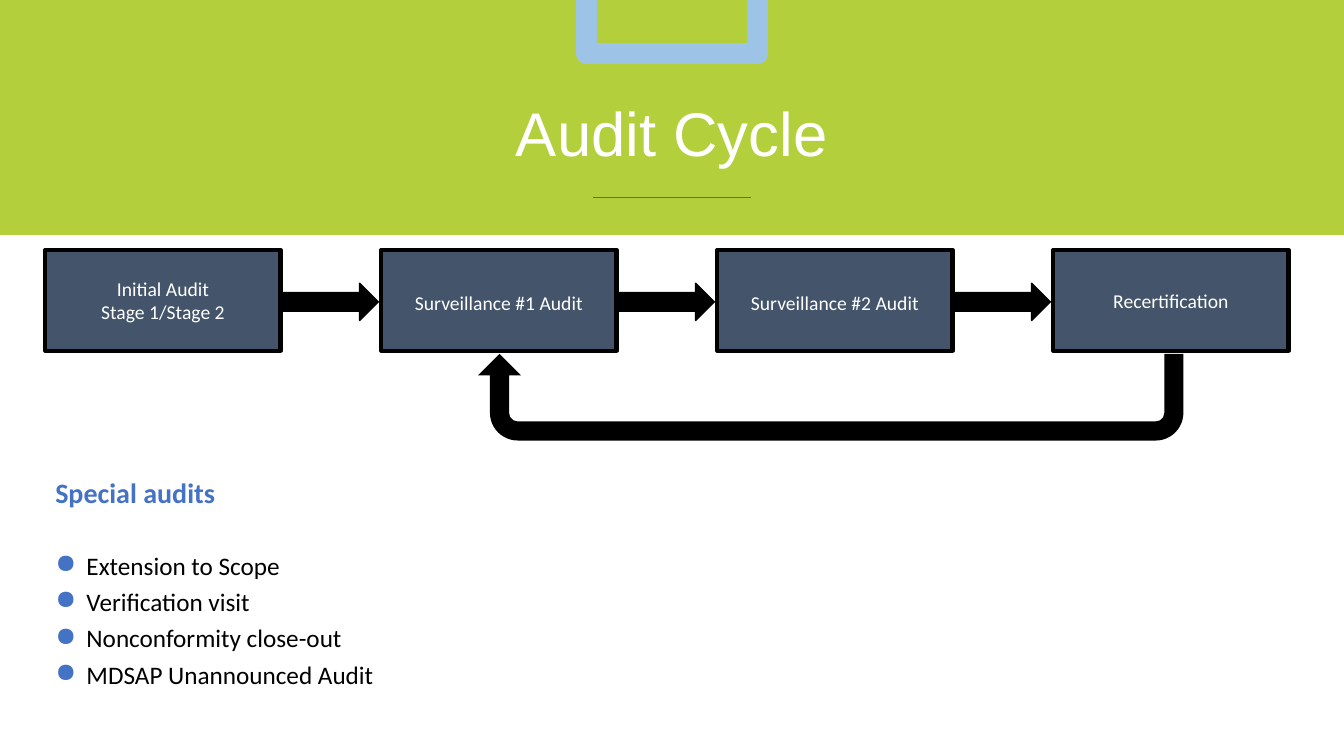
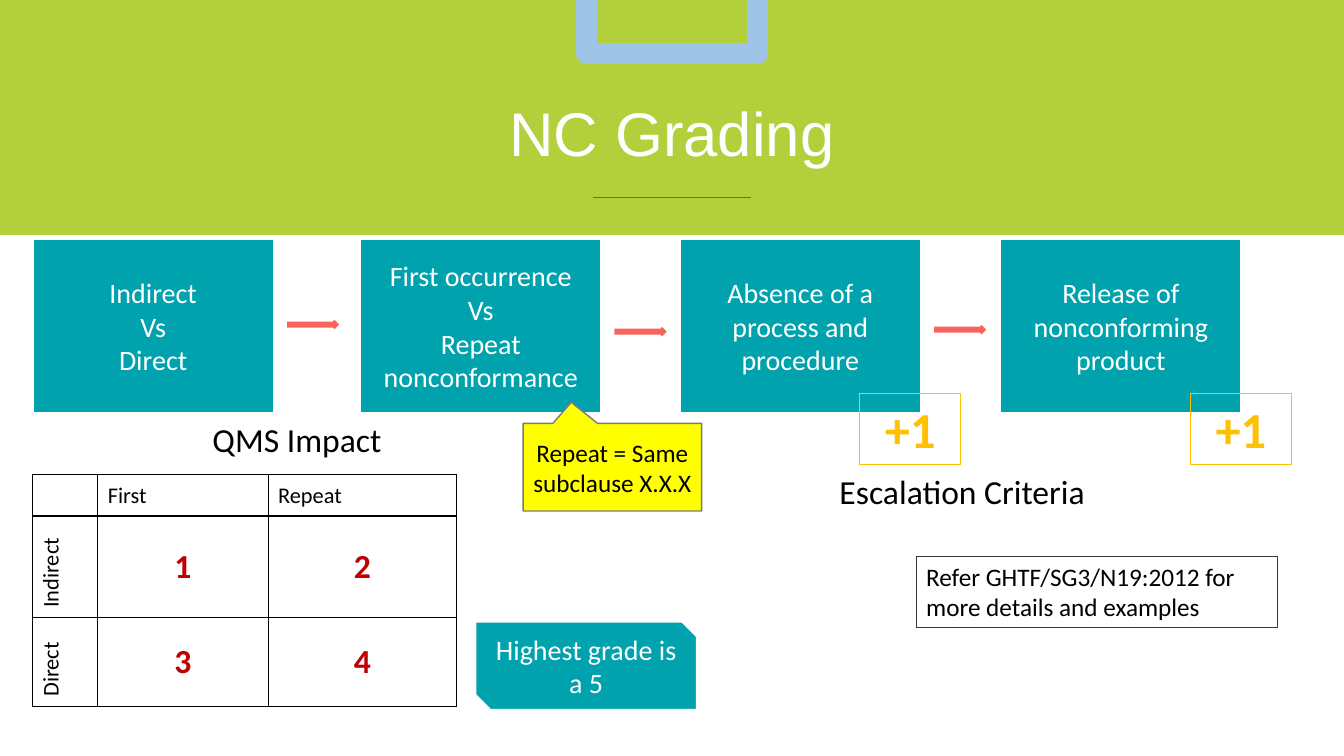
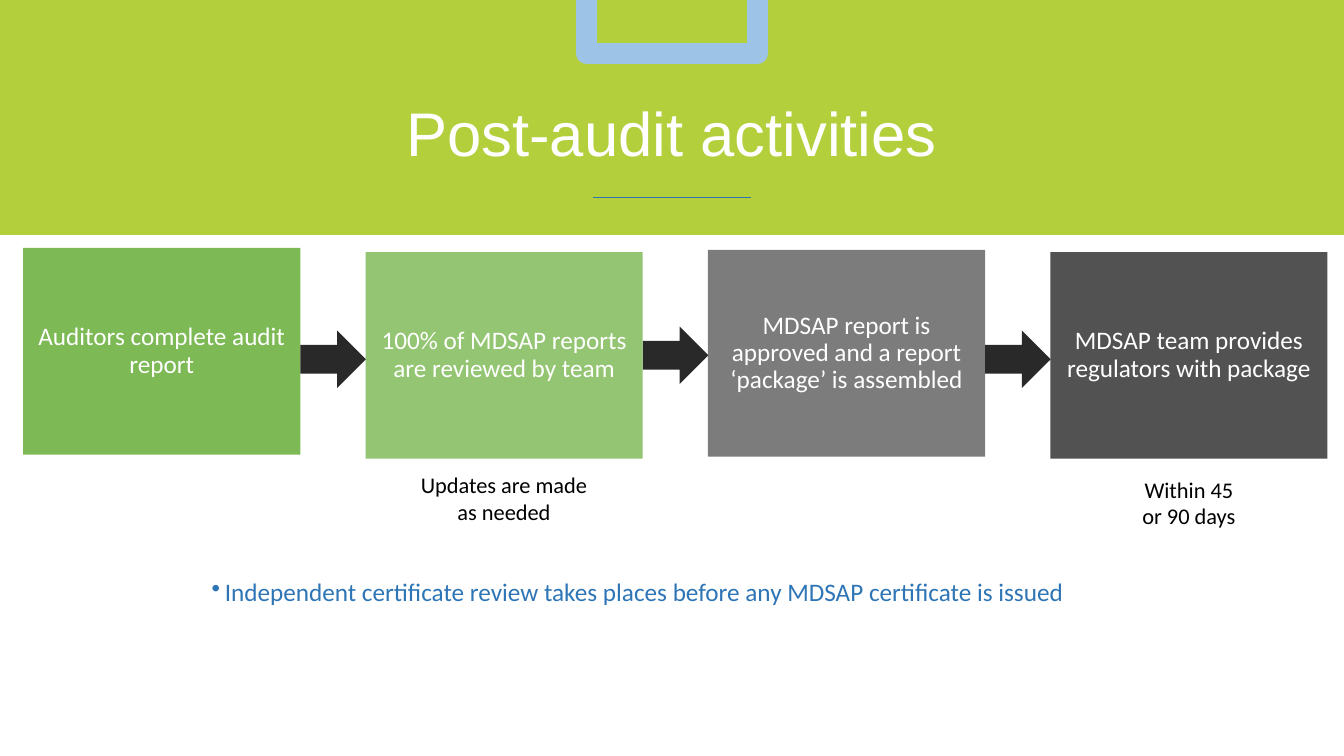
"""Build three audit programme slides on a grid of 80 columns by 45 rows."""

from lxml import etree
from pptx import Presentation
from pptx.dml.color import RGBColor
from pptx.enum.shapes import MSO_CONNECTOR, MSO_SHAPE
from pptx.enum.text import MSO_ANCHOR, PP_ALIGN
from pptx.oxml.ns import qn
from pptx.util import Inches, Pt

COLUMNS, ROWS = 80, 45
WIDTH, HEIGHT = Inches(13.33), Inches(7.5)
RECTANGLE = MSO_SHAPE.RECTANGLE
PROCESS = MSO_SHAPE.FLOWCHART_PROCESS
ARROW = MSO_SHAPE.RIGHT_ARROW
U_TURN = MSO_SHAPE.U_TURN_ARROW
CALLOUT = MSO_SHAPE.RECTANGULAR_CALLOUT
SNIPPED = MSO_SHAPE.SNIP_2_DIAG_RECTANGLE
STRAIGHT = MSO_CONNECTOR.STRAIGHT
LEFT, CENTER = PP_ALIGN.LEFT, PP_ALIGN.CENTER
TOP, MIDDLE = MSO_ANCHOR.TOP, MSO_ANCHOR.MIDDLE

COLORS = {
    "white": "FFFFFF", "black": "000000", "lime": "B3CF3B", "sky": "9DC3E6",
    "blue": "2E75B6", "accent": "4472C4", "slate": "44546A", "teal": "00A3AD",
    "coral": "F8635B", "gold": "FFC000", "red": "C00000", "yellow": "FFFF00",
    "green": "7DB955", "pale green": "93C572", "gray": "7C7C7C",
    "dark gray": "525252", "charcoal": "292929", "border gray": "7A7A7A",
    "ink": "37333B",
}


def color(name):
    """Return a named colour."""
    return RGBColor.from_string(COLORS[name])


class Deck:
    """Hold the shared style and the slide being drawn."""

    def __init__(self):
        """Start an empty widescreen presentation."""
        self.presentation = Presentation()
        self.presentation.slide_width = WIDTH
        self.presentation.slide_height = HEIGHT
        self.slide = None

    def grid(self, left, top, width, height):
        """Turn grid columns and rows into slide lengths."""
        column, row = WIDTH / COLUMNS, HEIGHT / ROWS
        return (round(left * column), round(top * row),
                round(width * column), round(height * row))

    def new_slide(self, title):
        """Add a slide with the title band, its frame and its divider."""
        layout = self.presentation.slide_layouts[6]
        self.slide = self.presentation.slides.add_slide(layout)
        self.shape(RECTANGLE, (0, 0, COLUMNS, 13.98), fill="lime")
        self.shape(RECTANGLE, (34.9, -1.26, 10.2, 4.44), line=("sky", 15))
        self.divider(35.28, 44.72, 11.76)
        self.text((0, 5.88, COLUMNS, 7.92), title, size=44, ink="white",
                  align=CENTER, spacing=0.9, font="Arial")

    def divider(self, start, end, row):
        """Draw a thin horizontal line."""
        left, top, right, bottom = self.grid(start, row, end, row)
        connector = self.slide.shapes.add_connector(
            STRAIGHT, left, top, right, bottom)
        connector.line.color.rgb = color("blue")
        connector.line.width = Pt(0.5)
        etree.SubElement(connector._element.spPr, qn("a:effectLst"))

    def shape(self, kind, box, fill=None, line=None, adjustments=(),
              rotation=0):
        """Add a preset shape with an optional fill and outline."""
        shape = self.slide.shapes.add_shape(kind, *self.grid(*box))
        shape.shadow.inherit = False
        shape.rotation = rotation
        for index, value in enumerate(adjustments):
            shape.adjustments[index] = value
        if fill:
            shape.fill.solid()
            shape.fill.fore_color.rgb = color(fill)
        else:
            shape.fill.background()
        if line:
            shape.line.color.rgb = color(line[0])
            shape.line.width = Pt(line[1])
        else:
            shape.line.fill.background()
        return shape

    def panel(self, kind, box, text, fill=None, line=None, adjustments=(),
              **style):
        """Add a preset shape that carries text."""
        shape = self.shape(kind, box, fill, line, adjustments)
        settings = {"ink": "white", "align": CENTER, "anchor": MIDDLE}
        self.fill_frame(shape.text_frame, text, **{**settings, **style})

    def text(self, box, text, **style):
        """Add a wrapping text box."""
        text_box = self.slide.shapes.add_textbox(*self.grid(*box))
        self.fill_frame(text_box.text_frame, text, **style)

    def fill_frame(self, frame, text, anchor=TOP, inset=None, **style):
        """Fill a text frame and style its paragraphs."""
        frame.text = text
        frame.word_wrap = True
        frame.vertical_anchor = anchor
        if inset is not None:
            frame.margin_left = frame.margin_right = Inches(inset)
            frame.margin_top = frame.margin_bottom = Inches(inset)
        self.style_frame(frame, **style)

    def style_frame(self, frame, size=18, ink="black", bold=False, align=LEFT,
                    spacing=1.0, bullet=None, font="Calibri"):
        """Style every paragraph and run of a text frame."""
        for paragraph in frame.paragraphs:
            if bullet:
                self.bullet(paragraph, *bullet)
            paragraph.alignment = align
            paragraph.line_spacing = spacing
            for run in paragraph.runs:
                run.font.name = font
                run.font.size = Pt(size)
                run.font.bold = bold
                run.font.color.rgb = color(ink)

    def bullet(self, paragraph, symbol, ink, percent, indent):
        """Give a paragraph a coloured bullet and a hanging indent."""
        properties = paragraph._p.get_or_add_pPr()
        properties.set("marL", str(Inches(indent)))
        properties.set("indent", str(-Inches(indent)))
        tint = etree.SubElement(properties, qn("a:buClr"))
        etree.SubElement(tint, qn("a:srgbClr"), val=COLORS[ink])
        etree.SubElement(properties, qn("a:buSzPct"), val=str(percent * 1000))
        etree.SubElement(properties, qn("a:buChar"), char=symbol)

    def table(self, left, top, widths, heights, rows):
        """Add a ruled table with upright row names and red grades."""
        box = self.grid(left, top, sum(widths), sum(heights))
        table = self.slide.shapes.add_table(
            len(heights), len(widths), *box).table
        table.first_row = table.horz_banding = False
        for column, width in zip(table.columns, widths):
            column.width = self.grid(0, 0, width, 0)[2]
        for row, height in zip(table.rows, heights):
            row.height = self.grid(0, 0, 0, height)[3]
        for row_index, row in enumerate(rows):
            for column_index, text in enumerate(row):
                cell = table.cell(row_index, column_index)
                cell.text = text
                cell.vertical_anchor = MIDDLE
                self.rule(cell)
                cell.fill.solid()
                cell.fill.fore_color.rgb = color("white")
                if row_index and column_index:
                    self.style_frame(cell.text_frame, 24, "red", True, CENTER)
                else:
                    self.style_frame(cell.text_frame, 16)
                if row_index and not column_index:
                    cell._tc.get_or_add_tcPr().set("vert", "vert270")

    def rule(self, cell):
        """Draw black borders around a table cell."""
        properties = cell._tc.get_or_add_tcPr()
        for side in ("a:lnL", "a:lnR", "a:lnT", "a:lnB"):
            border = etree.SubElement(properties, qn(side), w=str(Pt(1)))
            fill = etree.SubElement(border, qn("a:solidFill"))
            etree.SubElement(fill, qn("a:srgbClr"), val=COLORS["black"])


def audit_cycle(deck):
    """Draw the audit cycle and the list of special audits."""
    deck.new_slide("Audit Cycle")
    stages = (("Initial Audit\nStage 1/Stage 2", 1.0),
              ("Surveillance #1 Audit", 1.2),
              ("Surveillance #2 Audit", 1.2),
              ("Recertification", 1.0))
    for index, (stage, spacing) in enumerate(stages):
        left = 2.7 + 20 * index
        deck.panel(RECTANGLE, (left, 14.88, 14, 6), stage, "slate",
                   ("black", 3), size=14, spacing=spacing)
        if index < len(stages) - 1:
            deck.shape(ARROW, (left + 14, 16.86, 5.82, 2.22), "black",
                       ("black", 1))
    deck.shape(U_TURN, (28.44, 21.06, 42, 5.16), "black", rotation=180,
               adjustments=(0.22, 0.25, 0.25, 0.32, 1))
    deck.text((2.7, 28.02, 14.04, 2.64), "Special audits", size=20,
              ink="accent", bold=True)
    audits = ("Extension to Scope", "Verification visit",
              "Nonconformity close-out", "MDSAP Unannounced Audit")
    deck.text((2.7, 32.1, 69.24, 9.18), "\n".join(audits), spacing=1.2,
              bullet=("●", "accent", 105, 0.31))


def nc_grading(deck):
    """Draw the grading steps, the impact table and the notes."""
    deck.new_slide("NC Grading")
    steps = ((1.92, "Indirect\nVs\nDirect"),
             (21.42, "First occurrence\nVs\nRepeat nonconformance"),
             (40.44, "Absence of a process and procedure"),
             (59.52, "Release of nonconforming product"))
    for left, step in steps:
        deck.panel(PROCESS, (left, 14.22, 14.4, 10.38), step, "teal",
                   ("white", 2.25), size=20)
    for (left, _), top in zip(steps, (18.78, 19.2, 19.08)):
        deck.shape(ARROW, (left + 15.06, top, 3.36, 1.08), "coral",
                   ("white", 2.25))
    for left in (51.18, 70.86):
        deck.panel(RECTANGLE, (left, 23.4, 6, 4.26), "+1",
                   line=("gold", 0.75), size=36, ink="gold", bold=True,
                   anchor=TOP)
    deck.text((12.06, 24.66, 14.4, 3), "QMS Impact", size=24)
    deck.text((49.38, 27.72, 18.96, 3), "Escalation Criteria", size=24)
    deck.table(1.92, 28.26, (3.9, 10.14, 11.22), (2.46, 6.06, 5.28),
               (("", "First", "Repeat"),
                ("Indirect", "1", "2"),
                ("Direct", "3", "4")))
    deck.panel(SNIPPED, (28.32, 37.02, 13.14, 5.22), "Highest grade is a 5",
               "teal", ("white", 1), size=20)
    deck.panel(CALLOUT, (31.14, 25.2, 10.62, 5.22),
               "Repeat = Same subclause X.X.X", "yellow", ("border gray", 1),
               (-0.23, -0.74), ink="black")
    deck.panel(RECTANGLE, (54.54, 33.12, 21.48, 4.26),
               "Refer GHTF/SG3/N19:2012 for more details and examples",
               line=("ink", 0.75), ink="black", align=LEFT, anchor=TOP)


def post_audit(deck):
    """Draw the steps that follow an audit."""
    deck.new_slide("Post-audit activities")
    steps = (
        (14.76, "green", "Auditors complete audit report"),
        (15, "pale green", "100% of MDSAP reports are reviewed by team"),
        (14.88, "gray",
         "MDSAP report is approved and a report ‘package’ is assembled"),
        (15, "dark gray", "MDSAP team provides regulators with package"),
    )
    lefts = [1.38 + 20.38 * index for index in range(len(steps))]
    for left, (top, fill, step) in zip(lefts, steps):
        deck.panel(RECTANGLE, (left, top, 16.5, 12.3), step, fill,
                   spacing=0.9, inset=0.07)
    for left, top in zip(lefts, (19.68, 19.44, 19.68)):
        deck.shape(ARROW, (left + 16.5, top, 3.9, 3.42), "charcoal")
    deck.text((23.94, 27.78, 12.12, 3.84), "Updates are made as needed",
              size=16, align=CENTER)
    deck.text((67.02, 28.02, 7.5, 5.46), "Within 45 or 90 days",
              size=16, align=CENTER)
    deck.text((12.3, 28.98, 63.06, 12.66),
              "Independent certificate review takes places before any MDSAP "
              "certificate is issued", ink="blue", spacing=0.9, inset=0.05,
              anchor=MIDDLE, bullet=("•", "blue", 100, 0.13))


def main():
    """Build and save the presentation."""
    deck = Deck()
    audit_cycle(deck)
    nc_grading(deck)
    post_audit(deck)
    deck.presentation.save("out.pptx")


if __name__ == "__main__":
    main()
